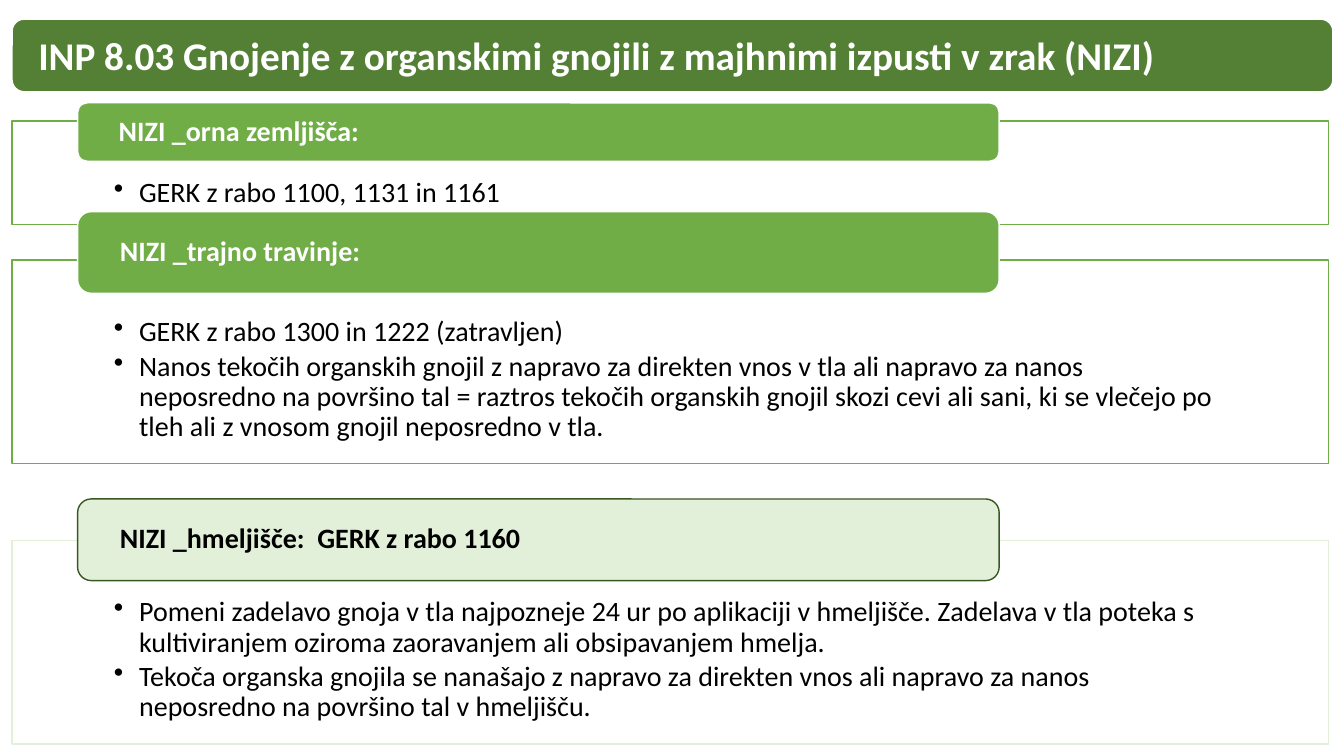
from lxml import etree
from pptx import Presentation
from pptx.dml.color import RGBColor
from pptx.enum.shapes import MSO_SHAPE
from pptx.enum.text import MSO_ANCHOR, PP_ALIGN
from pptx.oxml.ns import qn
from pptx.util import Inches, Pt

RECT, ROUND = MSO_SHAPE.RECTANGLE, MSO_SHAPE.ROUNDED_RECTANGLE
TOP, MIDDLE = MSO_ANCHOR.TOP, MSO_ANCHOR.MIDDLE
LEFT = PP_ALIGN.LEFT
WHITE, BLACK = "FFFFFF", "000000"
GREEN, PALE, DEEP, DARK = "70AD47", "E2F0D9", "538035", "385723"


def add_box(kind, x, y, w, h, fill, line):
    box = slide.shapes.add_shape(kind, Inches(x), Inches(y), Inches(w), Inches(h))
    box.shadow.inherit = False
    box.fill.solid()
    box.fill.fore_color.rgb = RGBColor.from_string(fill)
    box.line.color.rgb = RGBColor.from_string(line)
    box.line.width = Pt(1)
    return box


def set_text(shape, lines, size, color, bold, anchor, side, top=0, bottom=0):
    """Fill a shape with left-aligned paragraphs; side, top and bottom are insets."""
    frame = shape.text_frame
    frame.word_wrap = True
    frame.vertical_anchor = anchor
    frame.margin_left = frame.margin_right = Inches(side)
    frame.margin_top, frame.margin_bottom = Inches(top), Inches(bottom)
    frame.text = "\n".join(lines)
    for para in frame.paragraphs:
        para.alignment = LEFT
        para.line_spacing = 0.9
        para.space_after = Pt(3)
        para.font.name = "Calibri"
        para.font.size = Pt(size)
        para.font.bold = bold
        para.font.color.rgb = RGBColor.from_string(color)


# Section: header, header top and height, panel top and height, colours, bullets
sections = [
    ("NIZI _orna zemljišča:", 1.02, 0.58, 1.2, 1.03,
     GREEN, WHITE, WHITE, ["GERK z rabo 1100, 1131 in 1161"]),
    ("NIZI _trajno travinje:", 2.1, 0.81, 2.58, 2.02,
     GREEN, WHITE, WHITE,
     ["GERK z rabo 1300 in 1222 (zatravljen)",
      "Nanos tekočih organskih gnojil z napravo za direkten vnos v tla ali "
      "napravo za nanos neposredno na površino tal = raztros tekočih organskih "
      "gnojil skozi cevi ali sani, ki se vlečejo po tleh ali z vnosom gnojil "
      "neposredno v tla."]),
    ("NIZI _hmeljišče:  GERK z rabo 1160", 4.95, 0.81, 5.36, 2.02,
     PALE, DARK, BLACK,
     ["Pomeni zadelavo gnoja v tla najpozneje 24 ur po aplikaciji v hmeljišče. "
      "Zadelava v tla poteka s kultiviranjem oziroma zaoravanjem ali "
      "obsipavanjem hmelja.",
      "Tekoča organska gnojila se nanašajo z napravo za direkten vnos ali "
      "napravo za nanos neposredno na površino tal v hmeljišču."]),
]

prs = Presentation()
prs.slide_width, prs.slide_height = Inches(13.33), Inches(7.5)
slide = prs.slides.add_slide(prs.slide_layouts[5])

for head, y, h, top, tall, fill, edge, ink, items in sections:
    panel = add_box(RECT, 0.12, top, 13.06, tall, WHITE, fill)
    tint = panel.fill._xPr.find(".//" + qn("a:srgbClr"))
    etree.SubElement(tint, qn("a:alpha"), val="90000")
    set_text(panel, items, 20, BLACK, False, TOP, 1.01, 0.57, 0.16)
    for para in panel.text_frame.paragraphs:
        props = para._p.get_or_add_pPr()
        props.set("marL", str(Inches(0.25)))
        props.set("indent", str(Inches(-0.25)))
        mark = etree.Element(qn("a:buChar"), char="•")
        props.find(qn("a:defRPr")).addprevious(mark)
    label = add_box(ROUND, 0.77, y, 9.14, h, fill, edge)
    set_text(label, [head], 20, ink, True, MIDDLE, 0.38)

banner = add_box(ROUND, 0.12, 0.19, 13.1, 0.72, DEEP, WHITE)
title = slide.shapes.title
title.left, title.top = Inches(0.16), Inches(0.24)
title.width, title.height = Inches(13.01), Inches(0.67)
set_text(title, ["INP 8.03 Gnojenje z organskimi gnojili z majhnimi izpusti v zrak (NIZI)"],
         28, WHITE, True, MIDDLE, 0.22)
banner.element.addnext(title.element)  # bring the title in front of its banner

prs.save("out.pptx")
